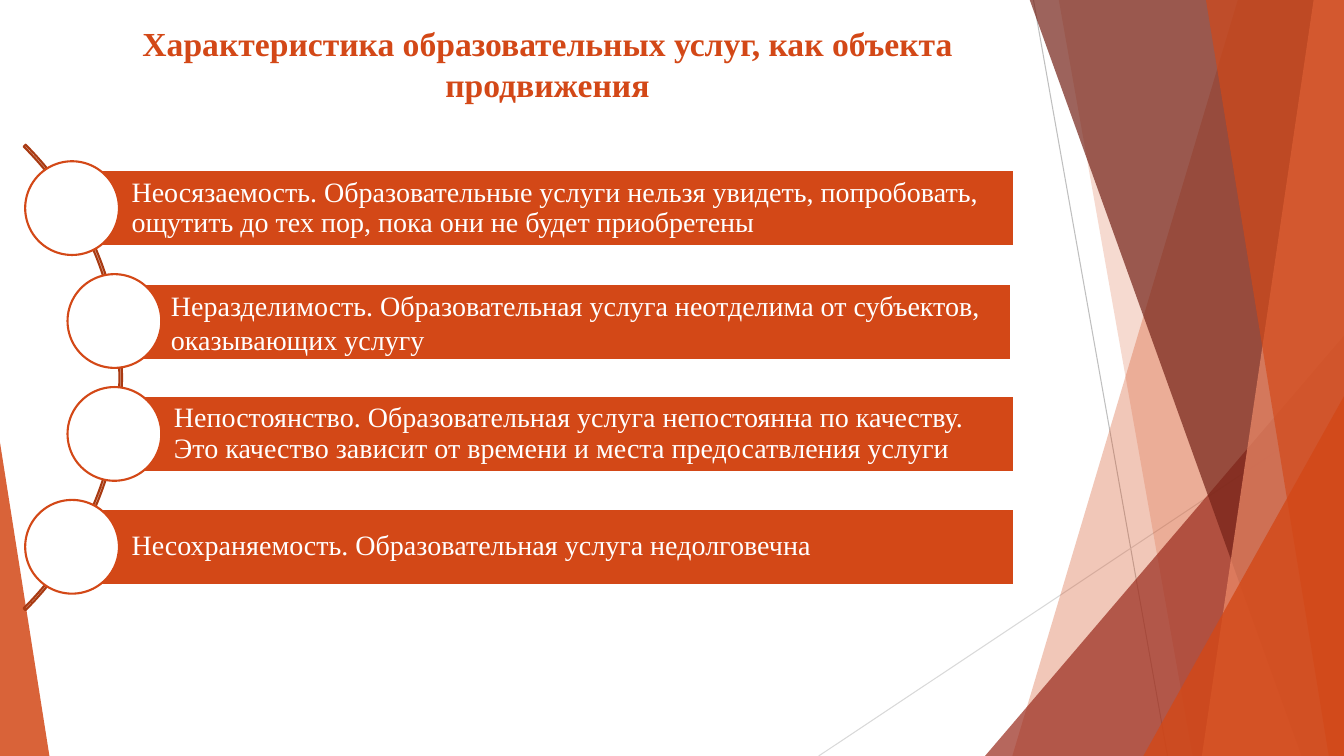
import pptx
import pptx.util
import pptx.dml.color
import pptx.enum.shapes
import pptx.enum.text
import pptx.oxml.ns
from dataclasses import dataclass
from lxml import etree

Inches = pptx.util.Inches
Pt = pptx.util.Pt
MSO_SHAPE = pptx.enum.shapes.MSO_SHAPE
qn = pptx.oxml.ns.qn


@dataclass(frozen=True)
class Theme:
    font: str = "Times New Roman"
    title_size: int = 24
    body_size: int = 20
    outline: float = 1.5
    hairline: float = 0.75
    accent: str = "D34817"
    arc: str = "A93A12"
    brick: str = "9B2D1F"
    maroon: str = "742217"
    peach: str = "EF8C6A"
    white: str = "FFFFFF"
    gray: str = "BFBFBF"
    light_gray: str = "D9D9D9"


THEME = Theme()
TOP, BOTTOM, RIGHT = -0.01, 7.5, 13.33

# Facets touching the right edge: top x, bottom x, colour, opacity %
BACK_FACETS = [
    (12.28, 10.04, THEME.accent, 30),
    (10.5, 11.83, THEME.accent, 20),
]
FRONT_FACETS = [
    (10.21, 12.91, THEME.maroon, 70),
    (13.03, 11.92, THEME.peach, 70),
    (11.96, 13.18, THEME.accent, 65),
]

# Rows: circle left, bar shift (x, y), line spacing, text
ROWS = [
    (0.25, (0, 0), 0.9, "Неосязаемость. Образовательные услуги нельзя увидеть, "
     "попробовать, ощутить до тех пор, пока они не будет приобретены"),
    (0.67, (-0.03, 0.01), 1.0, "Неразделимость. Образовательная услуга неотделима "
     "от субъектов, оказывающих услугу"),
    (0.67, (0, 0), 0.9, "Непостоянство. Образовательная услуга непостоянна по "
     "качеству. Это качество зависит от времени и места предосатвления услуги"),
    (0.25, (0, 0), 0.9, "Несохраняемость. Образовательная услуга недолговечна"),
]
FIRST_CIRCLE_TOP, ROW_PITCH, CIRCLE = 1.6, 1.12, 0.93
BAR_RIGHT, BAR_HEIGHT = 10.06, 0.75


def rgb(value):
    return pptx.dml.color.RGBColor.from_string(value)


def paint(sp, fill=None, line=None, opacity=100):
    sp.shadow.inherit = False
    if fill:
        sp.fill.solid()
        sp.fill.fore_color.rgb = rgb(fill)
    else:
        sp.fill.background()
    if opacity < 100:
        color = sp.fill._xPr.find(qn("a:solidFill"))[0]
        etree.SubElement(color, qn("a:alpha")).set("val", str(opacity * 1000))
    if line:
        sp.line.color.rgb = rgb(line)
        sp.line.width = Pt(THEME.outline)
    else:
        sp.line.fill.background()


def add_preset(s, kind, box, adjustments=(), **style):
    sp = s.shapes.add_shape(kind, *map(Inches, box))
    for i, value in enumerate(adjustments):
        sp.adjustments[i] = value
    paint(sp, **style)
    return sp


def add_hairline(s, start, end, color):
    line = s.shapes.add_connector(pptx.enum.shapes.MSO_CONNECTOR.STRAIGHT,
                                  *map(Inches, start + end))
    line.line.color.rgb = rgb(color)
    line.line.width = Pt(THEME.hairline)
    etree.SubElement(line._element.spPr, qn("a:effectLst"))


def add_facet(s, top_x, bottom_x, color, opacity):
    corners = [(top_x, TOP), (RIGHT, TOP), (RIGHT, BOTTOM), (bottom_x, BOTTOM)]
    points = [(Inches(x), Inches(y)) for x, y in corners]
    builder = s.shapes.build_freeform(*points[0])
    builder.add_line_segments(points[1:], close=True)
    paint(builder.convert_to_shape(), fill=color, opacity=opacity)


def format_text(p, size, color, bold=False):
    for r in p.runs:
        r.font.name = THEME.font
        r.font.size = Pt(size)
        r.font.bold = bold
        r.font.color.rgb = rgb(color)


def add_backdrop(s):
    add_hairline(s, (10.25, 0), (11.58, 7.5), THEME.gray)
    add_hairline(s, (13.33, 4.03), (8.12, 7.5), THEME.light_gray)
    for facet in BACK_FACETS:
        add_facet(s, *facet)
    add_preset(s, MSO_SHAPE.ISOSCELES_TRIANGLE, (9.77, 3.33, 3.56, 4.17), [1],
               fill=THEME.brick, opacity=72)
    for facet in FRONT_FACETS:
        add_facet(s, *facet)
    add_preset(s, MSO_SHAPE.ISOSCELES_TRIANGLE, (11.34, 3.93, 1.99, 3.57), [1],
               fill=THEME.accent, opacity=80)
    add_preset(s, MSO_SHAPE.ISOSCELES_TRIANGLE, (0, 4.39, 0.49, 3.11), [0],
               fill=THEME.accent, opacity=85)


def set_title(s, text):
    sp = s.shapes.title
    sp.left, sp.top, sp.width, sp.height = map(Inches, (0.73, 0.18, 9.4, 1.03))
    tf = sp.text_frame
    tf.text = text
    tf.word_wrap = True
    tf.auto_size = pptx.enum.text.MSO_AUTO_SIZE.NONE
    tf.vertical_anchor = pptx.enum.text.MSO_ANCHOR.TOP
    p = tf.paragraphs[0]
    p.alignment = pptx.enum.text.PP_ALIGN.CENTER
    format_text(p, THEME.title_size, THEME.accent, bold=True)


def add_bar(s, box, spacing, text):
    sp = add_preset(s, MSO_SHAPE.RECTANGLE, box, fill=THEME.accent, line=THEME.white)
    tf = sp.text_frame
    tf.text = text
    tf.word_wrap = True
    tf.vertical_anchor = pptx.enum.text.MSO_ANCHOR.MIDDLE
    tf.margin_left = Inches(0.59)
    tf.margin_top = tf.margin_right = tf.margin_bottom = Inches(0.06)
    p = tf.paragraphs[0]
    p.alignment = pptx.enum.text.PP_ALIGN.LEFT
    p.line_spacing = spacing
    format_text(p, THEME.body_size, THEME.white)


def add_row(s, index, circle_left, shift, spacing, text):
    top = FIRST_CIRCLE_TOP + index * ROW_PITCH
    # The bar starts at the centre of its circle
    left = circle_left + CIRCLE / 2
    bar_top = top + (CIRCLE - BAR_HEIGHT) / 2
    add_bar(s, (left + shift[0], bar_top + shift[1], BAR_RIGHT - left, BAR_HEIGHT),
            spacing, text)
    add_preset(s, MSO_SHAPE.OVAL, (circle_left, top, CIRCLE, CIRCLE),
               fill=THEME.white, line=THEME.accent)


def main():
    prs = pptx.Presentation()
    prs.slide_width, prs.slide_height = Inches(13.33), Inches(7.5)
    s = prs.slides.add_slide(prs.slide_layouts[5])

    # Background facets and title
    add_backdrop(s)
    set_title(s, "Характеристика образовательных услуг, как объекта продвижения")

    # Arc with the list of characteristics
    add_preset(s, MSO_SHAPE.BLOCK_ARC, (-5.32, 0.48, 6.53, 6.53),
               [189, 27, 0.004], line=THEME.arc)
    for index, row in enumerate(ROWS):
        add_row(s, index, *row)

    prs.save("out.pptx")


if __name__ == "__main__":
    main()
